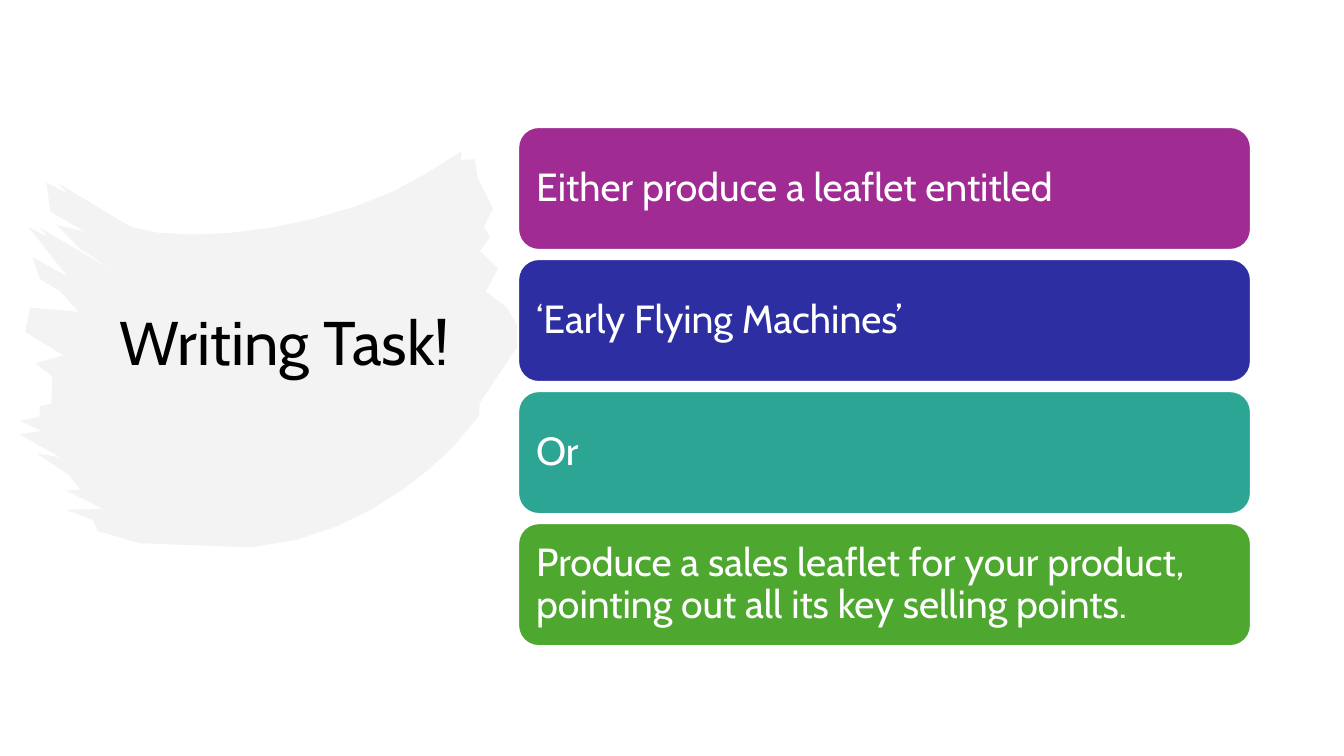
from dataclasses import dataclass

from lxml import etree
from pptx import Presentation
from pptx.dml.color import RGBColor
from pptx.enum.shapes import MSO_SHAPE
from pptx.enum.text import MSO_ANCHOR, PP_ALIGN
from pptx.oxml.ns import qn
from pptx.util import Inches, Pt

ROUNDED = MSO_SHAPE.ROUNDED_RECTANGLE
MIDDLE = MSO_ANCHOR.MIDDLE
LEFT = PP_ALIGN.LEFT


@dataclass(frozen=True)
class Theme:
    font: str = "Cabin"
    title_size: int = 44
    card_size: int = 28
    line_spacing: float = 0.9
    ink: str = "000000"
    paper: str = "FFFFFF"
    brush: str = "E8E8E8"
    brush_alpha: int = 50


THEME = Theme()
COLS, ROWS = 133.33, 75
CELL = Inches(0.1)
CURVE_STEPS = 8

CARDS = [
    ("Either produce a leaflet entitled", "A02B93"),
    ("‘Early Flying Machines’", "2C2EA2"),
    ("Or", "2DA594"),
    ("Produce a sales leaflet for your product, "
     "pointing out all its key selling points.", "4EA72E"),
]

TOP_EDGE = [(130, 225), (190, 245), (340, 225), (423, 172)]
RIGHT_EDGE = [
    (458, 150), (457, 159), (471, 158), (474, 177), (489, 207), (480, 225),
    (486, 235), (476, 249), (494, 266), (482, 289), (503, 305), (514, 324),
    (513, 344), (476, 399), (475, 412),
]
BOTTOM_EDGE = [(456, 435), (456, 436), (372, 533), (249, 542)]
LEFT_EDGE = [
    (139, 538), (97, 526), (92, 515), (66, 505), (102, 504), (66, 486),
    (80, 485), (68, 470), (36, 449), (60, 453), (19, 430), (41, 427),
    (20, 417), (39, 413), (40, 402), (51, 400), (52, 373), (35, 360),
    (63, 352), (25, 329), (30, 305), (78, 309), (59, 288), (40, 277),
    (32, 255), (67, 274), (28, 225), (47, 235), (40, 226), (117, 271),
    (80, 247), (56, 223), (85, 230), (50, 210), (46, 181), (67, 192),
    (58, 182),
]


def bezier(a, b, c, d):
    for i in range(CURVE_STEPS + 1):
        t = i / CURVE_STEPS
        u = 1 - t
        yield tuple(u**3 * m + 3 * u * u * t * n + 3 * u * t * t * o + t**3 * q
                    for m, n, o, q in zip(a, b, c, d))


def rgb(hex_code):
    return RGBColor.from_string(hex_code)


def write_text(s, text, size, color, insets):
    tf = s.text_frame
    tf.word_wrap = True
    tf.vertical_anchor = MIDDLE
    tf.margin_left, tf.margin_top, tf.margin_right, tf.margin_bottom = map(Inches, insets)
    p = tf.paragraphs[0]
    p.text = text
    p.alignment = LEFT
    p.line_spacing = THEME.line_spacing
    p.font.name = THEME.font
    p.font.size = Pt(size)
    p.font.color.rgb = rgb(color)


def add_brush(slide, x, y, w, h):
    outline = [*bezier(*TOP_EDGE), *RIGHT_EDGE, *bezier(*BOTTOM_EDGE), *LEFT_EDGE]
    xs, ys = zip(*outline)
    left, top = min(xs), min(ys)
    x_scale = w * CELL / (max(xs) - left)
    y_scale = h * CELL / (max(ys) - top)
    points = [((px - left) * x_scale, (py - top) * y_scale) for px, py in outline]
    builder = slide.shapes.build_freeform(*points[0])
    builder.add_line_segments(points[1:], close=True)
    s = builder.convert_to_shape(round(x * CELL), round(y * CELL))
    s.shadow.inherit = False
    s.fill.solid()
    s.fill.fore_color.rgb = rgb(THEME.brush)
    s.line.fill.background()
    color = s._element.spPr.find(qn("a:solidFill"))[0]
    etree.SubElement(color, qn("a:alpha"), val=str(THEME.brush_alpha * 1000))


def add_title(slide, x, y, w, h):
    s = slide.shapes.add_textbox(*(round(v * CELL) for v in (x, y, w, h)))
    write_text(s, "Writing Task!", THEME.title_size, THEME.ink, (0.1, 0.05, 0.1, 0.71))


def add_cards(slide, x, y, w, h, gap):
    card_h = (h - gap * (len(CARDS) - 1)) / len(CARDS)
    for i, (text, color) in enumerate(CARDS):
        box = (x, y + i * (card_h + gap), w, card_h)
        s = slide.shapes.add_shape(ROUNDED, *(round(v * CELL) for v in box))
        s.shadow.inherit = False
        s.fill.solid()
        s.fill.fore_color.rgb = rgb(color)
        s.line.color.rgb = rgb(THEME.paper)
        s.line.width = Pt(1.5)
        write_text(s, text, THEME.card_size, THEME.paper, (0.12,) * 4)


def main():
    prs = Presentation()
    prs.slide_width = round(COLS * CELL)
    prs.slide_height = ROWS * CELL
    slide = prs.slides.add_slide(prs.slide_layouts[6])
    add_brush(slide, 1.9, 15, 49.5, 39.3)
    add_title(slide, 10.9, 7.5, 38.2, 60.1)
    add_cards(slide, 51.4, 12.6, 72.7, 51.5, gap=0.9)
    prs.save("out.pptx")


if __name__ == "__main__":
    main()
